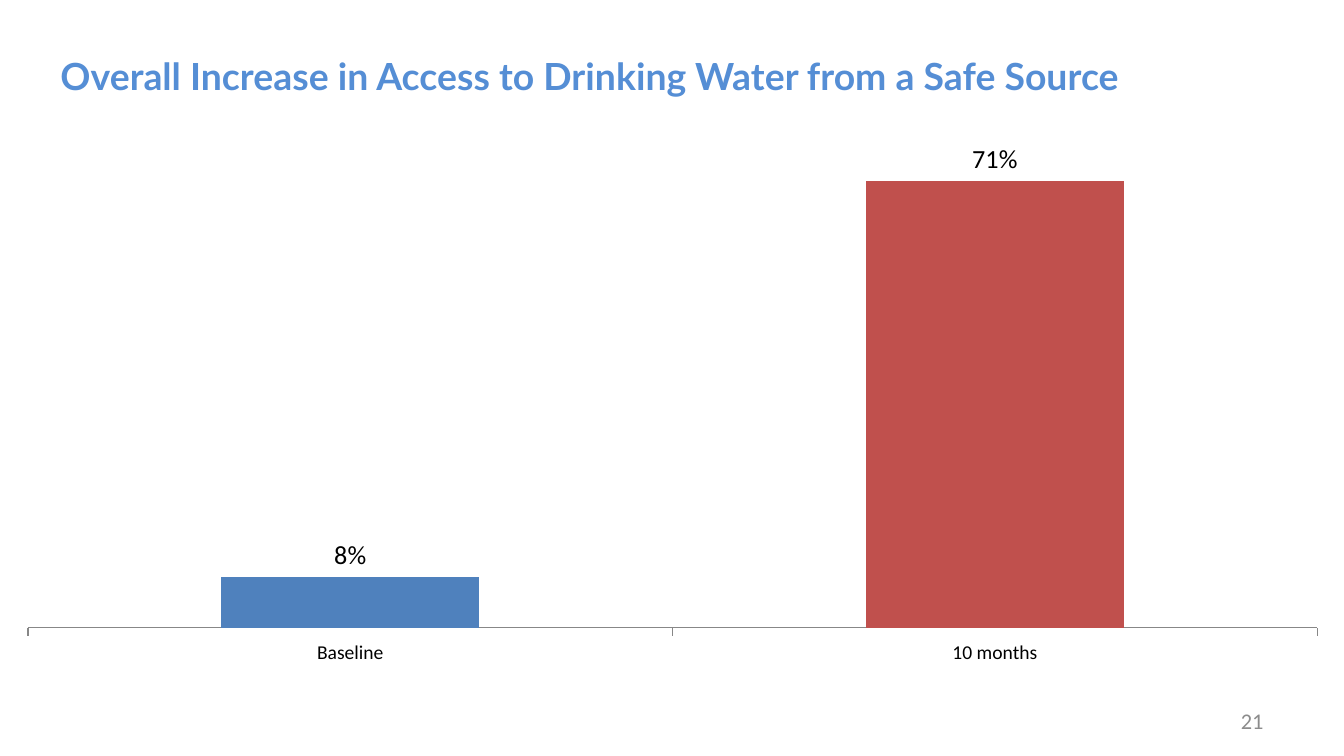
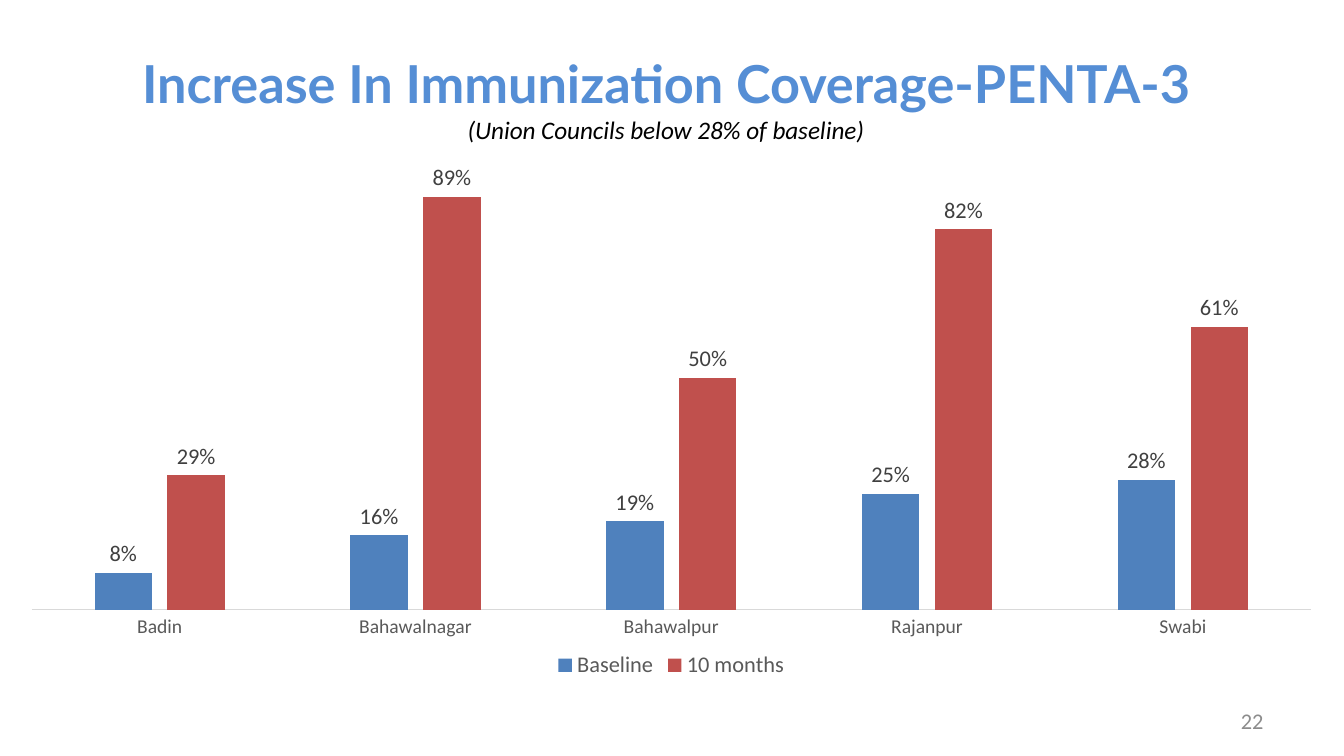
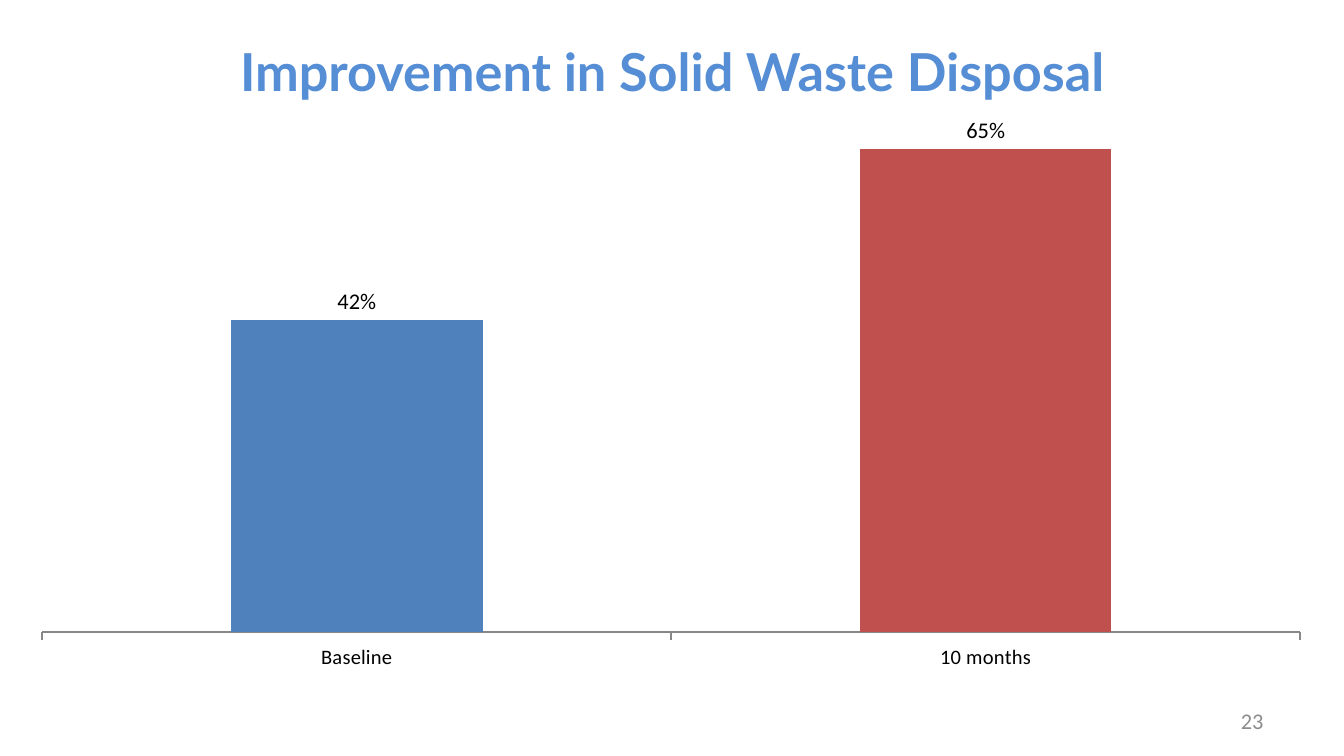
import pptx
import pptx.chart.data
import pptx.dml.color
import pptx.enum.chart
import pptx.enum.text
import pptx.oxml
import pptx.oxml.ns
import pptx.util

SLIDE_WIDTH = pptx.util.Inches(10)
SLIDE_HEIGHT = pptx.util.Inches(5.625)
COLUMN = SLIDE_WIDTH / 100
ROW = SLIDE_HEIGHT / 100
TITLE_ONLY = 5

TITLE_FONT = "Lato"
BODY_FONT = "Calibri"
TITLE_BLUE = "558ED5"
BASELINE_BLUE = "4F81BD"
RESULT_RED = "C0504D"
BLACK = "000000"
AXIS_GRAY = "878787"
NUMBER_GRAY = "8C8C8C"

LEFT = pptx.enum.text.PP_ALIGN.LEFT
CENTER = pptx.enum.text.PP_ALIGN.CENTER
RIGHT = pptx.enum.text.PP_ALIGN.RIGHT
NO_TICK = pptx.enum.chart.XL_TICK_MARK.NONE
OUTSIDE_TICK = pptx.enum.chart.XL_TICK_MARK.OUTSIDE


def color(hex_string):
    """Turn a hex string into a colour."""
    return pptx.dml.color.RGBColor.from_string(hex_string)


def grid(left, top, width, height):
    """Turn columns and rows, in hundredths of the slide, into lengths."""
    return [round(left * COLUMN), round(top * ROW), round(width * COLUMN), round(height * ROW)]


def format_font(font, size, fill=BLACK, name=BODY_FONT, bold=False, italic=False):
    """Set the look of a font."""
    font.name = name
    font.size = pptx.util.Pt(size)
    font.bold = bold
    font.italic = italic
    font.color.rgb = color(fill)


def write_text(paragraph, text, align=LEFT, **font_format):
    """Add a formatted run to a paragraph."""
    paragraph.alignment = align
    run = paragraph.add_run()
    run.text = text
    format_font(run.font, **font_format)


def prepare_frame(shape):
    """Wrap and centre a shape's text vertically and return its first paragraph."""
    frame = shape.text_frame
    frame.word_wrap = True
    frame.auto_size = pptx.enum.text.MSO_AUTO_SIZE.NONE
    frame.vertical_anchor = pptx.enum.text.MSO_ANCHOR.MIDDLE
    return frame.paragraphs[0]


def add_title(slide, text, area, size=28, align=CENTER, subtitle=None):
    """Place the title, with an optional italic line below it."""
    title = slide.shapes.title
    title.left, title.top, title.width, title.height = grid(*area)
    paragraph = prepare_frame(title)
    write_text(paragraph, text, align=align, size=size, fill=TITLE_BLUE, name=TITLE_FONT, bold=True)
    if subtitle:
        paragraph.add_line_break()
        write_text(paragraph, subtitle, align=align, size=13.5, italic=True)


def add_slide_number(slide, number):
    """Write the slide number at the bottom right."""
    box = slide.shapes.add_textbox(*grid(71.7, 92.62, 23.3, 5.33))
    write_text(prepare_frame(box), str(number), align=RIGHT, size=12, fill=NUMBER_GRAY)


def set_plot_layout(chart, left, top, width, height):
    """Fix the inner plot area as shares of the chart."""
    plot_area = chart._chartSpace.chart.plotArea
    for layout in plot_area.findall(pptx.oxml.ns.qn("c:layout")):
        plot_area.remove(layout)
    modes = '<c:layoutTarget val="inner"/><c:xMode val="edge"/><c:yMode val="edge"/>'
    sizes = f'<c:x val="{left}"/><c:y val="{top}"/><c:w val="{width}"/><c:h val="{height}"/>'
    plot_area.insert(0, pptx.oxml.parse_xml(
        f'<c:layout {pptx.oxml.ns.nsdecls("c")}><c:manualLayout>{modes}{sizes}'
        '</c:manualLayout></c:layout>'))


def format_axes(chart, maximum, size, fill, line, line_width, tick):
    """Show only the category axis, above a fixed value scale."""
    values = chart.value_axis
    values.minimum_scale, values.maximum_scale = 0, maximum
    values.has_major_gridlines = False
    values.visible = False
    categories = chart.category_axis
    categories.major_tick_mark = tick
    categories.minor_tick_mark = NO_TICK
    categories.format.line.color.rgb = color(line)
    categories.format.line.width = pptx.util.Pt(line_width)
    format_font(categories.tick_labels.font, size, fill)


def fill_solid(target, fill):
    """Fill a series or a point with one colour."""
    target.format.fill.solid()
    target.format.fill.fore_color.rgb = color(fill)


def add_column_chart(slide, area, categories, series, plot_layout, maximum, label_size,
                     axis_size, label_fill=BLACK, axis_fill=BLACK, axis_line=AXIS_GRAY,
                     axis_width=0.75, tick=OUTSIDE_TICK, gap=150, overlap=0):
    """Add a clustered column chart with percent labels and return it."""
    data = pptx.chart.data.CategoryChartData(number_format="0%")
    data.categories = categories
    for name, values in series.items():
        data.add_series(name, values)
    kind = pptx.enum.chart.XL_CHART_TYPE.COLUMN_CLUSTERED
    chart = slide.shapes.add_chart(kind, *grid(*area), data).chart
    chart.has_title = False
    chart.has_legend = False
    format_font(chart.font, label_size)
    format_axes(chart, maximum, axis_size, axis_fill, axis_line, axis_width, tick)
    set_plot_layout(chart, *plot_layout)
    plot = chart.plots[0]
    plot.vary_by_categories = False
    plot.gap_width, plot.overlap = gap, overlap
    for column_series, fill in zip(plot.series, (BASELINE_BLUE, RESULT_RED)):
        fill_solid(column_series, fill)
        labels = column_series.data_labels
        labels.show_value = True
        labels.number_format = "0%"
        labels.number_format_is_linked = False
        labels.position = pptx.enum.chart.XL_LABEL_POSITION.OUTSIDE_END
        format_font(labels.font, label_size, label_fill)
    return chart


def add_before_after_chart(slide, area, values, **chart_format):
    """Add a chart of one baseline column and one red result column."""
    chart = add_column_chart(slide, area, ["Baseline", "10 months"],
                             {"Series 1": values}, **chart_format)
    fill_solid(chart.plots[0].series[0].points[1], RESULT_RED)


def add_legend(chart, size, fill):
    """Show the legend below the plot."""
    chart.has_legend = True
    chart.legend.position = pptx.enum.chart.XL_LEGEND_POSITION.BOTTOM
    chart.legend.include_in_layout = False
    format_font(chart.legend.font, size, fill)


def build_water_slide(slide):
    """Show access to safe drinking water."""
    add_title(slide, "Overall Increase in Access to Drinking Water from a Safe Source",
              (3.5, 2.31, 92.9, 15.29), size=20, align=LEFT)
    add_before_after_chart(slide, (0.9, 15.82, 98.3, 73.24), (0.08, 0.71),
                           plot_layout=(0.012, 0.008, 0.976, 0.91), maximum=0.8,
                           label_size=14, axis_size=10.5)


def build_immunization_slide(slide):
    """Compare immunization coverage by district."""
    add_title(slide, "Increase In Immunization Coverage-PENTA-3", (6, 5.33, 87.1, 15.29),
              subtitle="(Union Councils below 28% of baseline)")
    chart = add_column_chart(
        slide, (1.2, 17.24, 97.5, 73.24),
        ["Badin", "Bahawalnagar", "Bahawalpur", "Rajanpur", "Swabi"],
        {"Baseline": (0.08, 0.16, 0.19, 0.25, 0.28),
         "10 months": (0.29, 0.89, 0.5, 0.82, 0.61)},
        plot_layout=(0.012, 0.028, 0.976, 0.838), maximum=1, label_size=12, axis_size=10.5,
        label_fill="404040", axis_fill="595959", axis_line="D9D9D9", tick=NO_TICK,
        gap=219, overlap=-27)
    add_legend(chart, 12, "595959")


def build_waste_slide(slide):
    """Show the improvement in solid waste disposal."""
    add_title(slide, "Improvement in Solid Waste Disposal", (6.9, 5.33, 86.2, 8))
    add_before_after_chart(slide, (1.2, 13.33, 97.5, 76.98), (0.42, 0.65),
                           plot_layout=(0.02, 0.02, 0.96, 0.893), maximum=0.7,
                           label_size=12, axis_size=11, axis_width=1)


def main():
    """Build and save the presentation."""
    presentation = pptx.Presentation()
    presentation.slide_width = SLIDE_WIDTH
    presentation.slide_height = SLIDE_HEIGHT
    builders = (build_water_slide, build_immunization_slide, build_waste_slide)
    for number, build_slide in enumerate(builders, start=21):
        slide = presentation.slides.add_slide(presentation.slide_layouts[TITLE_ONLY])
        build_slide(slide)
        add_slide_number(slide, number)
    presentation.save("out.pptx")


if __name__ == "__main__":
    main()
